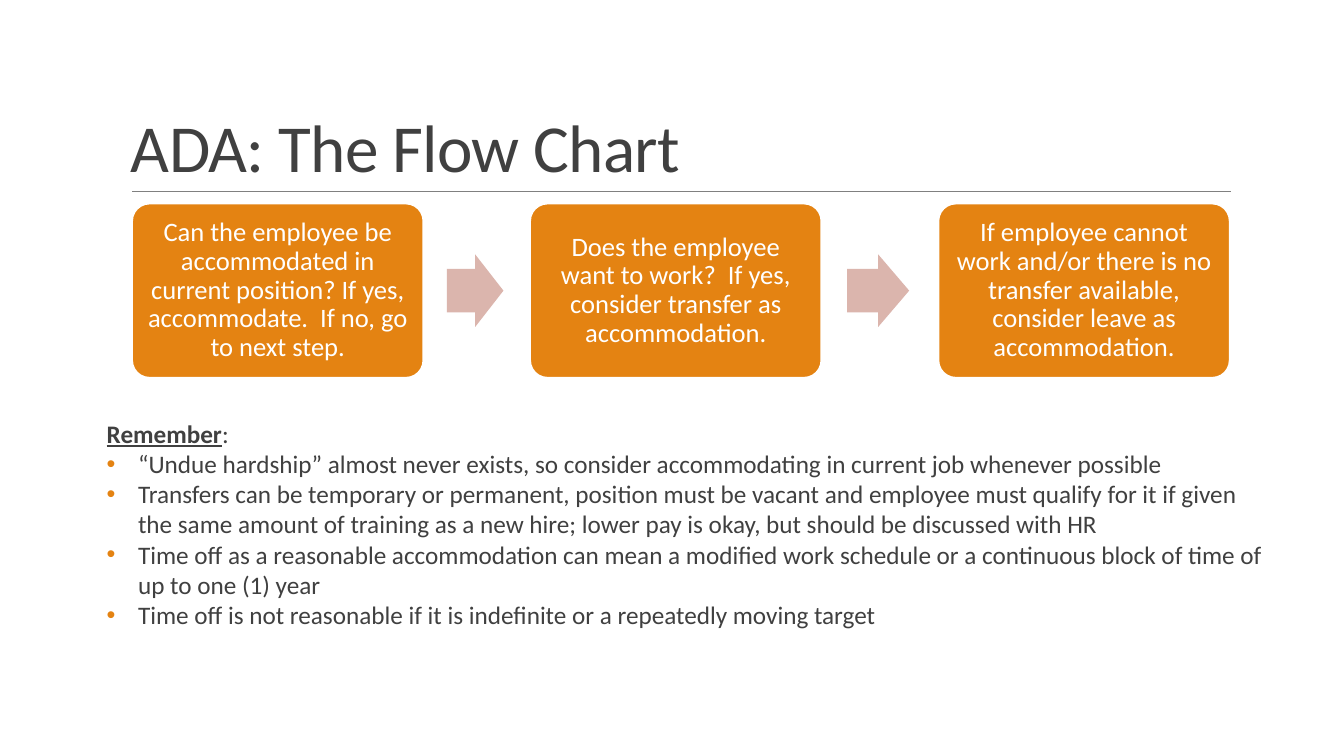
import lxml.etree
import pptx
import pptx.dml.color
import pptx.enum.shapes
import pptx.enum.text
import pptx.oxml.ns
import pptx.util

Cm, Pt = pptx.util.Cm, pptx.util.Pt
RGBColor = pptx.dml.color.RGBColor
SHAPE = pptx.enum.shapes.MSO_SHAPE
ALIGN = pptx.enum.text.PP_ALIGN
ANCHOR = pptx.enum.text.MSO_ANCHOR

ORANGE = RGBColor(0xE4, 0x83, 0x12)
ROSE = RGBColor(0xDB, 0xB5, 0xAD)
DARK = RGBColor(0x40, 0x40, 0x40)
GREY = RGBColor(0x80, 0x80, 0x80)
WHITE = RGBColor(0xFF, 0xFF, 0xFF)

STEPS = [
    (3.33, "Can the employee be accommodated in current position? "
           "If yes, accommodate.  If no, go to next step."),
    (13.36, "Does the employee want to work?  If yes, consider transfer as accommodation."),
    (23.65, "If employee cannot work and/or there is no transfer available, "
            "consider leave as accommodation."),
]
STEP_TOP, STEP_WIDTH, STEP_HEIGHT = 5.13, 7.34, 4.39
ARROW_HEIGHT = 1.83

REMINDERS = [
    "“Undue hardship” almost never exists, so consider accommodating in current job "
    "whenever possible",
    "Transfers can be temporary or permanent, position must be vacant and employee must "
    "qualify for it if given the same amount of training as a new hire; lower pay is okay, "
    "but should be discussed with HR",
    "Time off as a reasonable accommodation can mean a modified work schedule or a "
    "continuous block of time of up to one (1) year",
    "Time off is not reasonable if it is indefinite or a repeatedly moving target",
]


def add_xml(parent, tag, **attributes):
    """Append a drawing element to a parent element."""
    return lxml.etree.SubElement(parent, pptx.oxml.ns.qn(tag), attributes)


def write(paragraph, text, size=18, color=DARK, bold=False, underline=False, tracking=None):
    """Add a formatted run to a paragraph."""
    run = paragraph.add_run()
    run.text = text
    font = run.font
    font.name, font.size, font.bold, font.underline = "Calibri", Pt(size), bold, underline
    font.color.rgb = color
    if tracking is not None:
        run._r.get_or_add_rPr().set("spc", str(tracking))


class FlowSlide:
    """Holds the current slide and its style."""

    def __init__(self, presentation):
        self.shapes = presentation.slides.add_slide(presentation.slide_layouts[6]).shapes

    def text_box(self, left, top, width, height, anchor=ANCHOR.TOP):
        frame = self.shapes.add_textbox(Cm(left), Cm(top), Cm(width), Cm(height)).text_frame
        frame.word_wrap = True
        frame.vertical_anchor = anchor
        return frame

    def rule(self, left, right, y):
        rule = self.shapes.add_connector(
            pptx.enum.shapes.MSO_CONNECTOR.STRAIGHT, Cm(left), Cm(y), Cm(right), Cm(y))
        rule.line.color.rgb = GREY
        rule.line.width = Pt(0.5)
        add_xml(rule._element.spPr, "a:effectLst")

    def block(self, kind, left, top, width, height, fill, adjustments):
        block = self.shapes.add_shape(kind, Cm(left), Cm(top), Cm(width), Cm(height))
        block.shadow.inherit = False
        block.fill.solid()
        block.fill.fore_color.rgb = fill
        block.line.fill.background()
        for index, value in enumerate(adjustments):
            block.adjustments[index] = value
        return block

    def step(self, left, text):
        step = self.block(SHAPE.ROUNDED_RECTANGLE, left, STEP_TOP, STEP_WIDTH, STEP_HEIGHT,
                          ORANGE, [0.1])
        step.line.color.rgb = WHITE
        step.line.width = Pt(1.25)
        frame = step.text_frame
        frame.word_wrap = True
        frame.vertical_anchor = ANCHOR.MIDDLE
        frame.margin_left = frame.margin_right = Cm(0.2)
        frame.margin_top = frame.margin_bottom = Cm(0.2)
        paragraph = frame.paragraphs[0]
        paragraph.alignment = ALIGN.CENTER
        paragraph.line_spacing = 0.9
        write(paragraph, text, size=19, color=WHITE)

    def arrow(self, gap_start, gap_end):
        gap = gap_end - gap_start
        self.block(SHAPE.RIGHT_ARROW, gap_start + 0.22 * gap,
                   STEP_TOP + (STEP_HEIGHT - ARROW_HEIGHT) / 2,
                   0.53 * gap, ARROW_HEIGHT, ROSE, [0.6, 0.5])

    def bullet(self, frame, text):
        paragraph = frame.add_paragraph()
        properties = paragraph._p.get_or_add_pPr()
        properties.set("marL", str(Cm(0.79)))
        properties.set("indent", str(-Cm(0.79)))
        add_xml(add_xml(properties, "a:buClr"), "a:srgbClr", val=str(ORANGE))
        add_xml(properties, "a:buFont", typeface="Arial")
        add_xml(properties, "a:buChar", char="•")
        write(paragraph, text)


def main():
    presentation = pptx.Presentation()
    presentation.slide_width, presentation.slide_height = Cm(33.87), Cm(19.05)
    slide = FlowSlide(presentation)

    # Title and rule
    slide.rule(3.33, 31.01, 4.83)
    title = slide.text_box(3.05, 0.79, 27.94, 4.03, ANCHOR.BOTTOM).paragraphs[0]
    title.line_spacing = 0.85
    write(title, "ADA: The Flow Chart", size=48, tracking=-50)

    # Flow of steps
    for left, text in STEPS:
        slide.step(left, text)
    for (left, _), (next_left, _) in zip(STEPS, STEPS[1:]):
        slide.arrow(left + STEP_WIDTH, next_left)

    # Reminders
    reminders = slide.text_box(2.44, 10.41, 29.74, 6.4)
    heading = reminders.paragraphs[0]
    write(heading, "Remember", bold=True, underline=True)
    write(heading, ":")
    for text in REMINDERS:
        slide.bullet(reminders, text)

    presentation.save("out.pptx")


if __name__ == "__main__":
    main()
